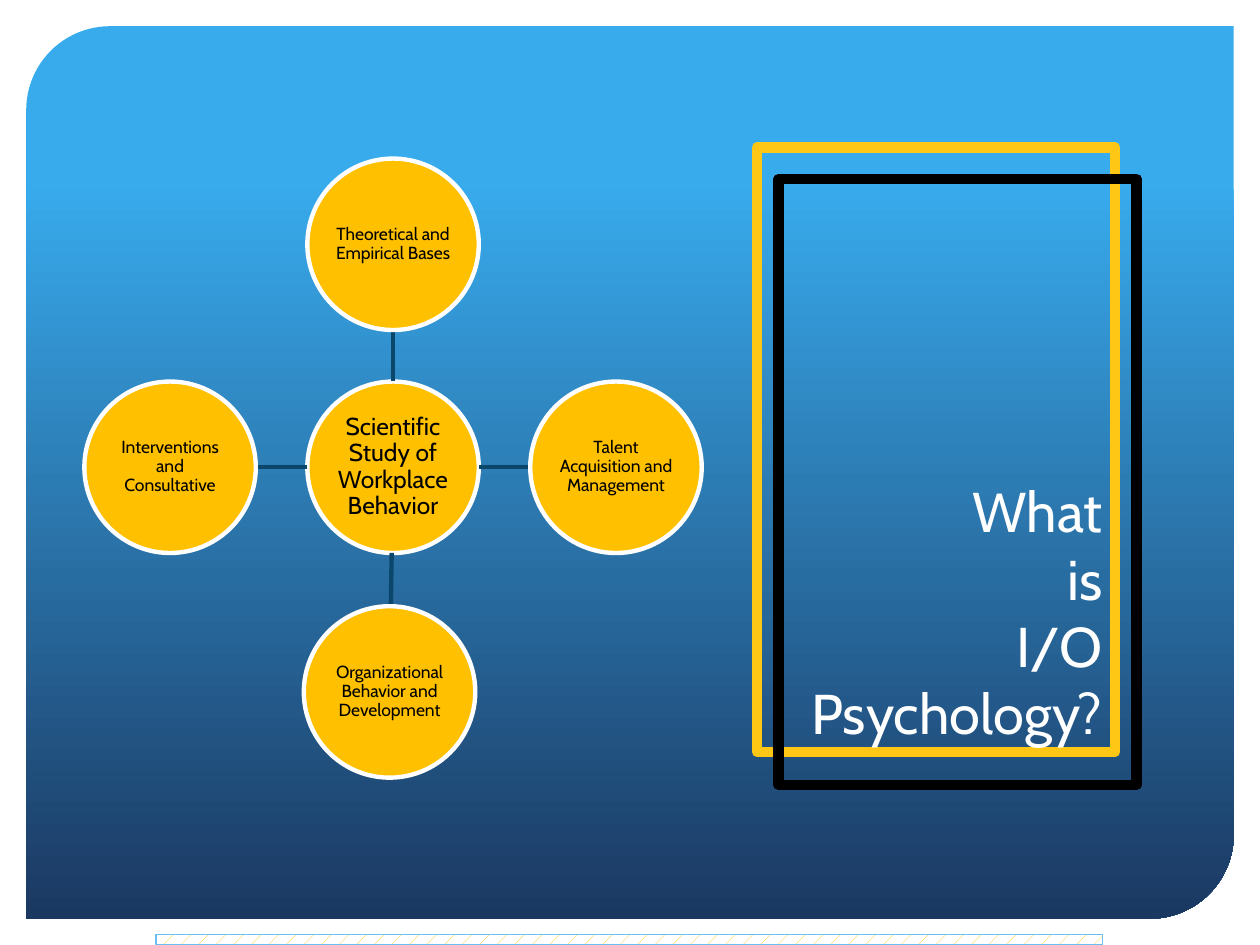
from lxml import etree
from pptx import Presentation
from pptx.dml.color import RGBColor
from pptx.enum.dml import MSO_PATTERN
from pptx.enum.shapes import MSO_CONNECTOR, MSO_SHAPE
from pptx.enum.text import MSO_ANCHOR, PP_ALIGN
from pptx.oxml.ns import qn
from pptx.util import Pt

RECT, OVAL = MSO_SHAPE.RECTANGLE, MSO_SHAPE.OVAL
PANEL = MSO_SHAPE.ROUND_2_DIAG_RECTANGLE
STRAIGHT = MSO_CONNECTOR.STRAIGHT
DOTS = MSO_PATTERN.PERCENT_5
MIDDLE, BOTTOM = MSO_ANCHOR.MIDDLE, MSO_ANCHOR.BOTTOM
CENTER, RIGHT = PP_ALIGN.CENTER, PP_ALIGN.RIGHT

FONT = "Cabin"
COLORS = {
    "sky": "38ABED", "navy": "1B3861", "gold": "FFC000", "frame": "FFC715",
    "link": "0A476B", "strip": "69BFF2", "white": "FFFFFF", "black": "000000",
}
DIAMETER = 98
HUB = (224.6, 267)
STEP = 127.4
# Label and offset of the centre from the hub
SPOKES = [
    ("Theoretical and Empirical Bases", 0, -STEP),
    ("Talent Acquisition and Management", STEP, 0),
    ("Organizational Behavior and Development", -2, STEP + 1),
    ("Interventions and Consultative", -STEP, 0),
]


def rgb(name):
    return RGBColor.from_string(COLORS[name])


def set_line(shape, color, width):
    shape.line.color.rgb = rgb(color)
    shape.line.width = Pt(width)


def add_shape(s, kind, left, top, width, height):
    sp = s.shapes.add_shape(kind, Pt(left), Pt(top), Pt(width), Pt(height))
    sp.shadow.inherit = False
    return sp


def set_text(tf, text, size, color, align, anchor):
    tf.word_wrap = True
    tf.vertical_anchor = anchor
    p = tf.paragraphs[0]
    p.text = text
    p.alignment = align
    p.font.name = FONT
    p.font.size = Pt(size)
    p.font.color.rgb = rgb(color)
    return p


def add_panel(s):
    sp = add_shape(s, PANEL, 15, 15, 690, 510)
    sp.adjustments[0] = 0.094
    sp.adjustments[1] = 0
    sp.line.fill.background()
    sp.fill.gradient()
    sp.fill.gradient_angle = 270
    stops = [(0.17, "sky"), (1, "navy")]
    for stop, (position, color) in zip(sp.fill.gradient_stops, stops):
        stop.position = position
        stop.color.rgb = rgb(color)
    s.shapes.title.element.addprevious(sp.element)


def style_frame(sp, color):
    """Thick outline with rounded corners and no fill."""
    sp.fill.background()
    set_line(sp, color, 6)
    etree.SubElement(sp.line._get_or_add_ln(), qn("a:round"))


def add_title(s):
    title = s.shapes.title
    title.left, title.top = Pt(432.7), Pt(84.2)
    title.width, title.height = Pt(204.5), Pt(345.6)
    style_frame(title, "frame")
    set_text(title.text_frame, "What\vis\vI/O\vPsychology?", 32, "white",
             RIGHT, BOTTOM)


def add_strip(s):
    sp = add_shape(s, RECT, 89.3, 534, 540.7, 5.8)
    sp.fill.patterned()
    sp.fill.pattern = DOTS
    sp.fill.fore_color.rgb = rgb("gold")
    sp.fill.back_color.rgb = rgb("white")
    set_line(sp, "strip", 1)


def add_circle(s, x, y, text, size):
    """Labelled circle centred on x, y."""
    sp = add_shape(s, OVAL, x - DIAMETER / 2, y - DIAMETER / 2,
                   DIAMETER, DIAMETER)
    sp.fill.solid()
    sp.fill.fore_color.rgb = rgb("gold")
    set_line(sp, "white", 2.5)
    tf = sp.text_frame
    tf.margin_left = tf.margin_right = Pt(0.7)
    tf.margin_top = tf.margin_bottom = Pt(0.7)
    set_text(tf, text, size, "black", CENTER, MIDDLE).line_spacing = 0.9


def add_link(s, dx, dy):
    """Line from the rim of the hub to the rim of the spoke at dx, dy."""
    x, y = HUB
    near = DIAMETER / 2 / max(abs(dx), abs(dy))
    far = 1 - near
    line = s.shapes.add_connector(
        STRAIGHT, Pt(x + dx * near), Pt(y + dy * near),
        Pt(x + dx * far), Pt(y + dy * far))
    set_line(line, "link", 2.5)
    etree.SubElement(line.element.spPr, qn("a:effectLst"))


def main():
    prs = Presentation()
    prs.slide_width, prs.slide_height = Pt(720), Pt(540)
    s = prs.slides.add_slide(prs.slide_layouts[5])
    add_panel(s)
    add_title(s)
    add_strip(s)
    style_frame(add_shape(s, RECT, 445, 102.2, 204.5, 346.3), "black")
    add_circle(s, *HUB, "Scientific Study of Workplace Behavior", 14)
    for text, dx, dy in SPOKES:
        add_link(s, dx, dy)
        add_circle(s, HUB[0] + dx, HUB[1] + dy, text, 10)
    prs.save("out.pptx")


if __name__ == "__main__":
    main()
